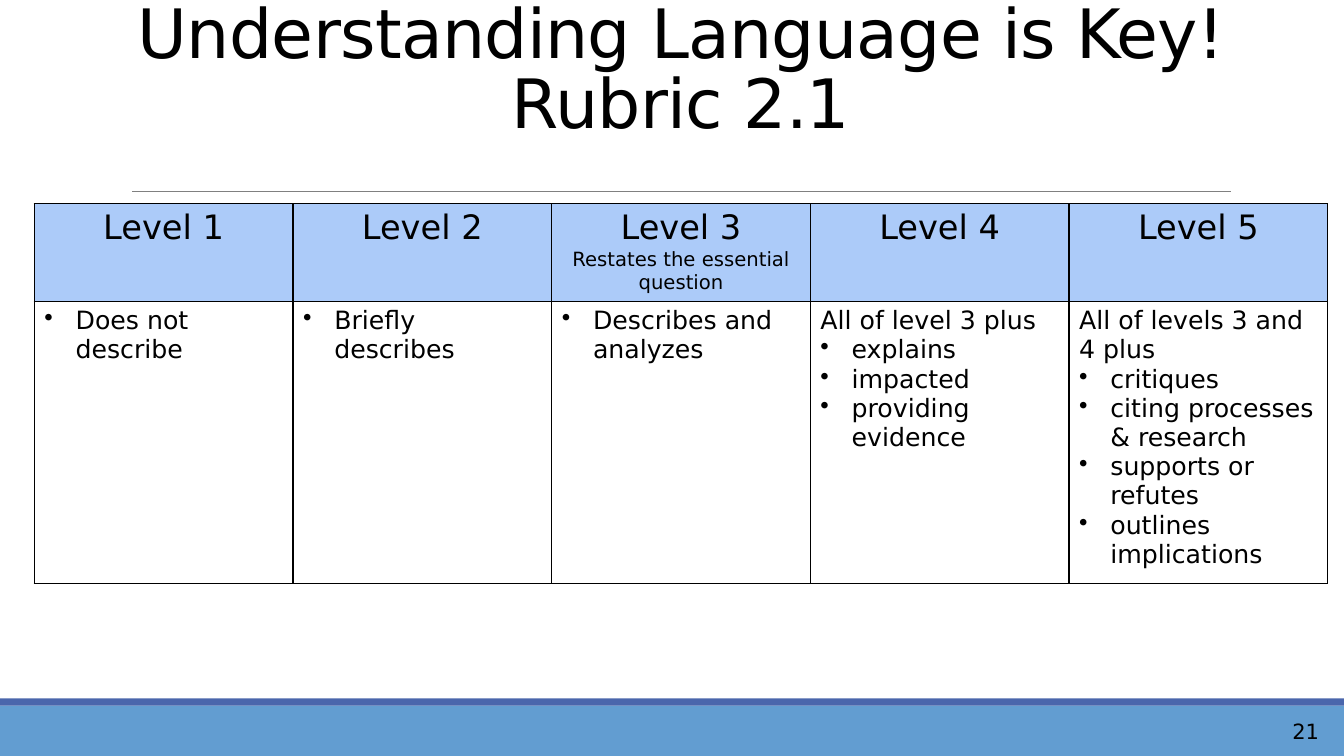
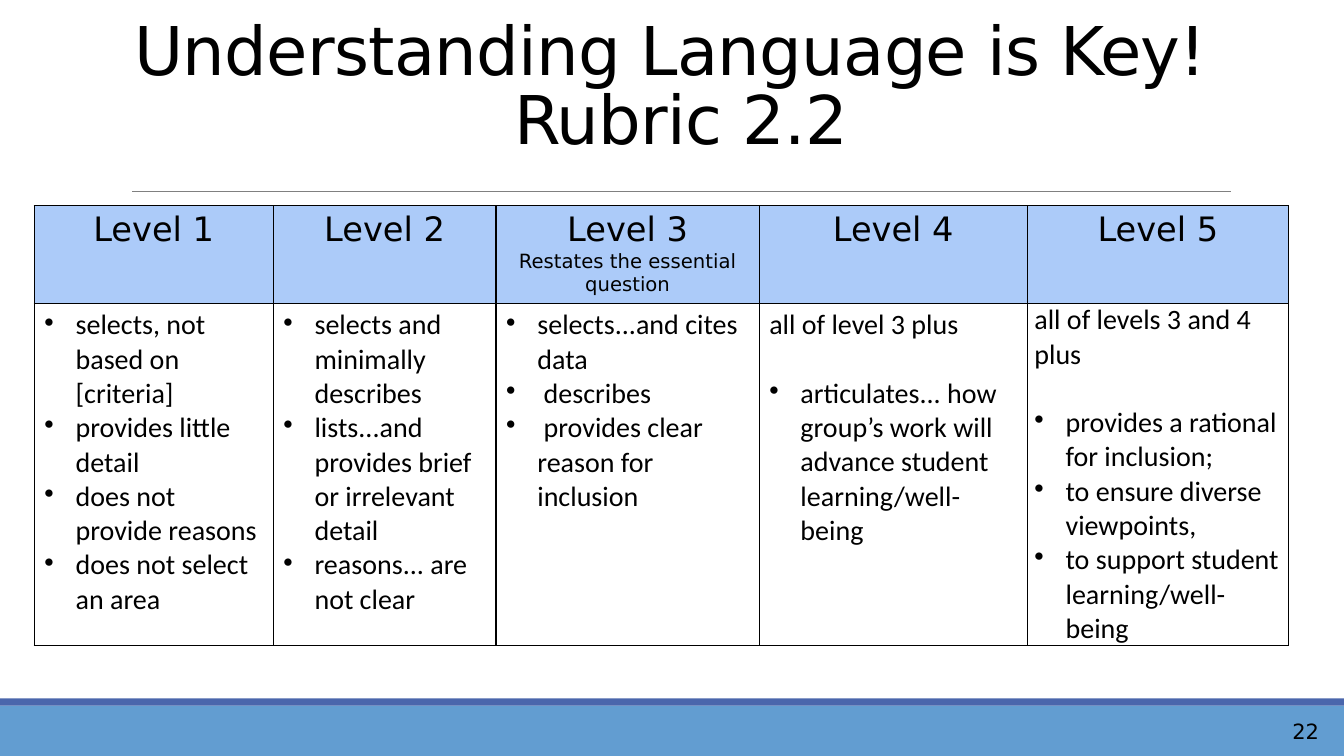
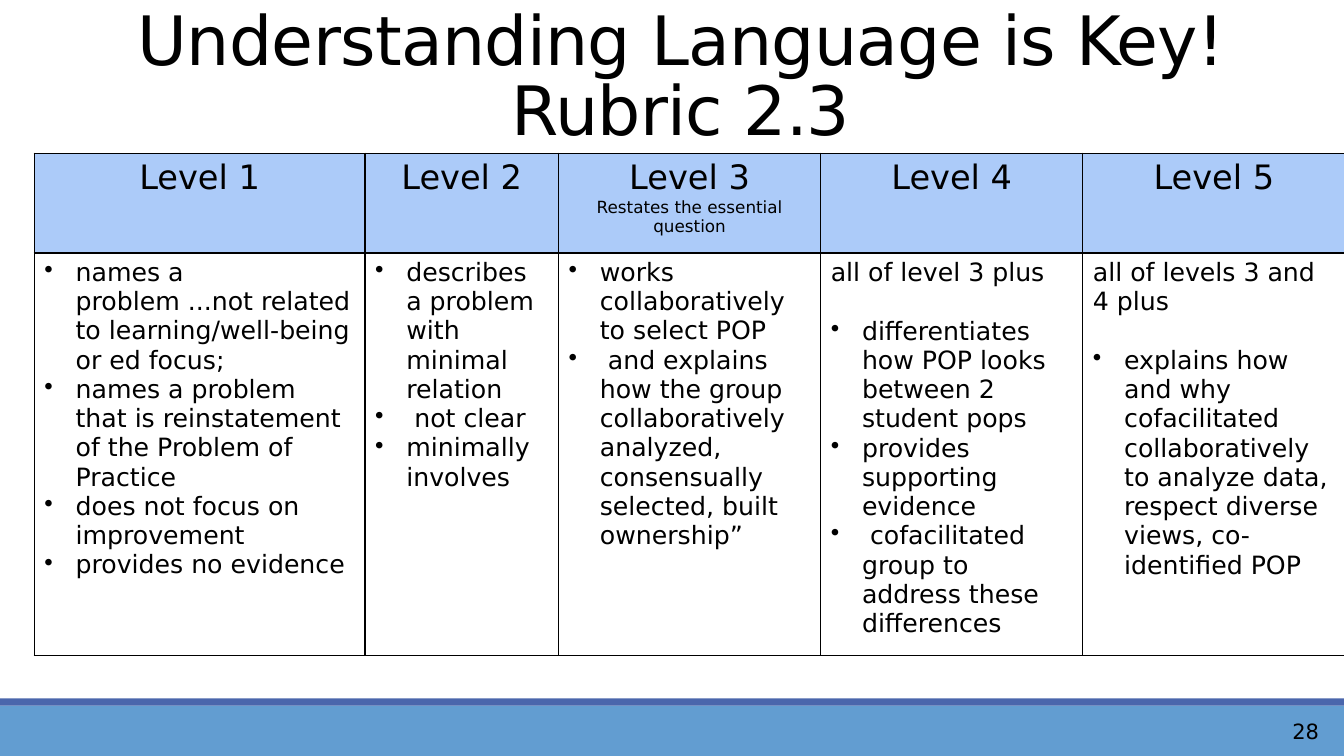
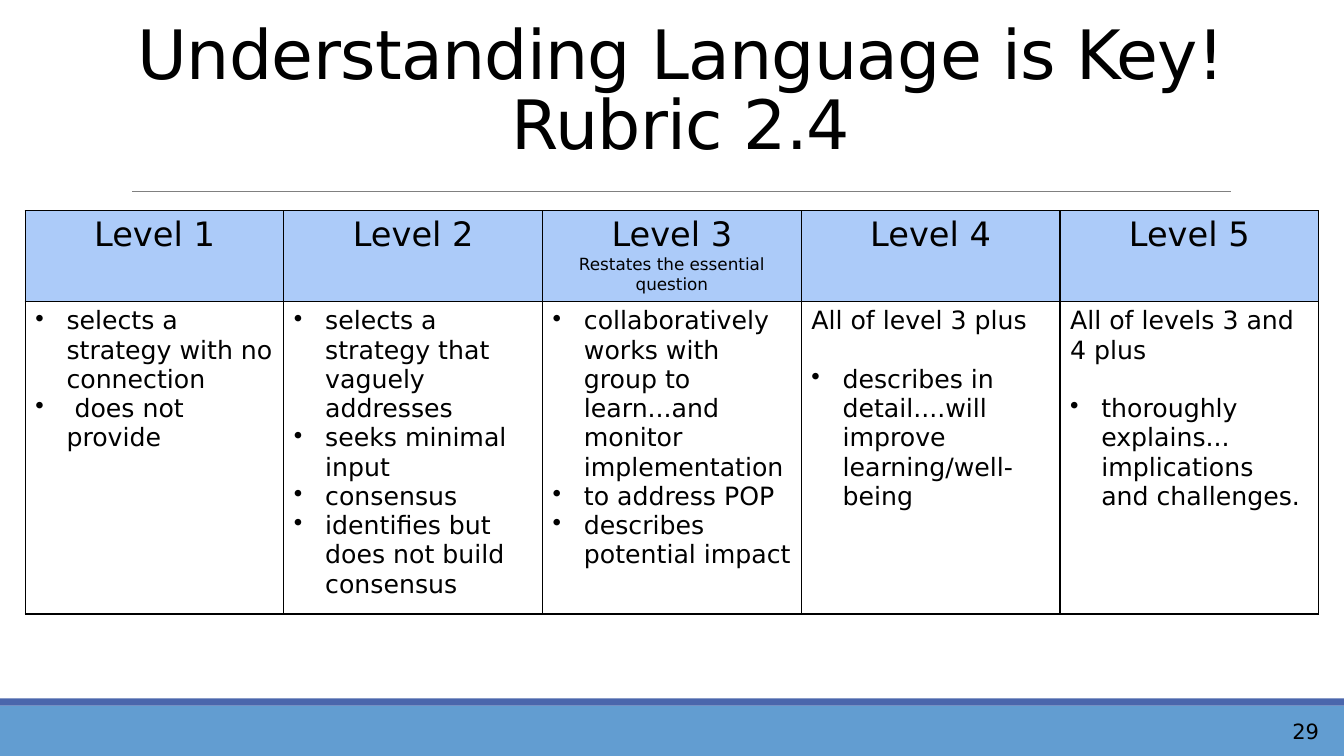
from lxml import etree
from pptx import Presentation
from pptx.dml.color import RGBColor
from pptx.enum.shapes import MSO_CONNECTOR, MSO_SHAPE
from pptx.enum.text import MSO_ANCHOR, MSO_AUTO_SIZE, PP_ALIGN
from pptx.oxml.ns import qn
from pptx.util import Inches, Pt

RECTANGLE = MSO_SHAPE.RECTANGLE
STRAIGHT = MSO_CONNECTOR.STRAIGHT
CENTER, RIGHT = PP_ALIGN.CENTER, PP_ALIGN.RIGHT
BOTTOM, MIDDLE = MSO_ANCHOR.BOTTOM, MSO_ANCHOR.MIDDLE
NO_AUTOFIT = MSO_AUTO_SIZE.NONE

BLACK, GRAY = "000000", "808080"
FOOTER_BLUE, STRIPE_BLUE, HEADER_BLUE = "629DD1", "4A66AC", "ACCBF9"
FONT = "DejaVu Sans"
SLIDE_WIDTH, SLIDE_HEIGHT = 13.33, 7.5
INDENT = 0.31
NBSP = chr(160)

# In each level, "intro" stands above the bulleted "points".
RUBRICS = [
    dict(
        number=21, heading=("Understanding Language is Key!", "Rubric 2.1"),
        title_box=(0.34, 0.31, 12.83, 1.15),
        table_at=(0.34, 2.02), columns=[12.83 / 5] * 5, rows=(0.94, 2.72),
        levels=[
            dict(points=["Does not describe"]),
            dict(points=["Briefly describes"]),
            dict(points=["Describes and analyzes"]),
            dict(intro="All of level 3 plus",
                 points=["explains", "impacted", "providing evidence"]),
            dict(intro="All of levels 3 and 4 plus",
                 points=["critiques", "citing processes & research",
                         "supports or refutes", "outlines implications"]),
        ],
    ),
    dict(
        number=22, heading=("Understanding Language is Key! ", "Rubric 2.2"),
        title_box=(0.34, 0.31, 12.83, 1.31), title_size=48,
        table_at=(0.34, 2.04), columns=[2.37, 2.21, 2.61, 2.66, 2.59],
        rows=(0.95, 3.4), body_font="Calibri", body_size=20, intro_gap=24.4,
        last_margins=(0.07, 0),
        levels=[
            dict(points=["selects, not based on [criteria]",
                         "provides little detail",
                         "does not provide reasons",
                         "does not select an area"]),
            dict(points=["selects and minimally describes",
                         "lists...and provides brief or irrelevant detail",
                         "reasons... are not clear"]),
            dict(points=["selects...and cites data",
                         " describes",
                         " provides clear reason for inclusion"]),
            dict(intro="all of level 3 plus",
                 points=["articulates... how group’s work will advance "
                         "student learning/well-being"]),
            dict(intro="all of levels 3 and 4 plus",
                 points=["provides a rational for inclusion;",
                         "to ensure diverse viewpoints,",
                         "to support student learning/well-being"]),
        ],
    ),
    dict(
        number=28, heading=("Understanding Language is Key!", "Rubric 2.3"),
        title_box=(0.34, 0.44, 12.83, 1.09),
        table_at=(0.34, 1.52), columns=[3.28, 1.92, 2.6, 2.6, 2.6],
        rows=(0.99, 3.88), note_size=12, intro_gap=21,
        levels=[
            dict(points=[f"names a problem{NBSP}...not related to "
                         "learning/well-being or ed focus;",
                         "names a problem that is reinstatement of the "
                         "Problem of Practice",
                         "does not focus on improvement",
                         "provides no evidence"]),
            dict(points=["describes a problem with minimal relation",
                         " not clear",
                         "minimally involves"]),
            dict(points=["works collaboratively to select POP",
                         " and explains how the group collaboratively "
                         "analyzed, consensually selected, built ownership”"]),
            dict(intro="all of level 3 plus",
                 points=["differentiates how POP looks between 2 student pops",
                         "provides supporting evidence",
                         " cofacilitated group to address these differences"]),
            dict(intro="all of levels 3 and 4 plus",
                 points=["explains how and why cofacilitated collaboratively "
                         "to analyze data, respect diverse views, "
                         "co-identified POP"]),
        ],
    ),
    dict(
        number=29, heading=("Understanding Language is Key!", "Rubric 2.4"),
        title_box=(0.34, 0.31, 12.83, 1.36),
        table_at=(0.25, 2.09), columns=[12.83 / 5] * 5, rows=(0.88, 3),
        note_size=12, intro_gap=21,
        levels=[
            dict(points=["selects a strategy with no connection",
                         " does not provide"]),
            dict(points=["selects a strategy that vaguely addresses",
                         "seeks minimal input",
                         "consensus",
                         "identifies but does not build consensus"]),
            dict(points=["collaboratively works with group to learn...and "
                         "monitor implementation",
                         "to address POP",
                         "describes potential impact"]),
            dict(intro="All of level 3 plus",
                 points=["describes in detail....will improve "
                         "learning/well-being"]),
            dict(intro="All of levels 3 and 4 plus",
                 points=["thoroughly explains... implications and "
                         "challenges."]),
        ],
    ),
]


def rgb(color):
    return RGBColor.from_string(color)


def style(paragraph, size, font=FONT, align=None):
    paragraph.font.name = font
    paragraph.font.size = Pt(size)
    paragraph.font.color.rgb = rgb(BLACK)
    paragraph.alignment = align


def add_bullet(paragraph):
    properties = paragraph._p.get_or_add_pPr()
    properties.set("marL", str(Inches(INDENT)))
    properties.set("indent", str(-Inches(INDENT)))
    etree.SubElement(properties, qn("a:buChar")).set("char", "•")


def add_band(slide, top, height, color):
    band = slide.shapes.add_shape(RECTANGLE, 0, Inches(top),
                                  Inches(SLIDE_WIDTH), Inches(height))
    band.shadow.inherit = False
    band.fill.solid()
    band.fill.fore_color.rgb = rgb(color)
    band.line.fill.background()


def add_frame(slide, number):
    """Add the footer bands, the rule under the title and the page number."""
    add_band(slide, 7, 0.5, FOOTER_BLUE)
    add_band(slide, 6.93, 0.07, STRIPE_BLUE)
    rule = slide.shapes.add_connector(STRAIGHT, Inches(1.31), Inches(1.9),
                                      Inches(12.21), Inches(1.9))
    rule.line.color.rgb = rgb(GRAY)
    rule.line.width = Pt(0.5)
    etree.SubElement(rule._element.spPr, qn("a:effectLst"))

    page = slide.shapes.add_textbox(Inches(12.46), Inches(7.03),
                                    Inches(0.72), Inches(0.44)).text_frame
    page.word_wrap = True
    page.vertical_anchor = MIDDLE
    page.text = str(number)
    style(page.paragraphs[0], 15, align=RIGHT)


def set_title(slide, lines, box, size):
    title = slide.shapes.title
    title.left, title.top, title.width, title.height = map(Inches, box)
    frame = title.text_frame
    frame.word_wrap = True
    frame.auto_size = NO_AUTOFIT
    frame.vertical_anchor = BOTTOM
    paragraph = frame.paragraphs[0]
    style(paragraph, size, align=CENTER)
    paragraph.line_spacing = 0.85
    for index, line in enumerate(lines):
        if index:
            paragraph.add_line_break()
        run = paragraph.add_run()
        run.text = line
        run._r.get_or_add_rPr().set("spc", "-50")


def add_borders(cell):
    properties = cell._tc.get_or_add_tcPr()
    for side in ("lnL", "lnR", "lnT", "lnB"):
        border = etree.SubElement(properties, qn(f"a:{side}"))
        border.set("w", str(Pt(1)))
        fill = etree.SubElement(border, qn("a:solidFill"))
        etree.SubElement(fill, qn("a:srgbClr")).set("val", BLACK)


def fill_header(cell, level, note_size):
    add_borders(cell)
    cell.fill.solid()
    cell.fill.fore_color.rgb = rgb(HEADER_BLUE)
    cell.text = f"Level {level}"
    style(cell.text_frame.paragraphs[0], 24, align=CENTER)
    if level == 3:
        note = cell.text_frame.add_paragraph()
        note.text = "Restates the essential question"
        style(note, note_size, align=CENTER)


def fill_body(cell, points, size, font, intro_gap, intro=None):
    add_borders(cell)
    cell.fill.background()
    frame = cell.text_frame
    lines = ([intro] if intro else []) + points
    for index, line in enumerate(lines):
        paragraph = frame.add_paragraph() if index else frame.paragraphs[0]
        paragraph.text = line
        if intro and index == 0:
            paragraph.space_after = Pt(intro_gap)
        else:
            add_bullet(paragraph)
        style(paragraph, size, font)


def add_rubric_table(slide, at, columns, rows, levels, note_size, body_size,
                     body_font, intro_gap, last_margins):
    left, top = at
    table = slide.shapes.add_table(
        len(rows), len(columns), Inches(left), Inches(top),
        Inches(sum(columns)), Inches(sum(rows))).table
    table.first_row = table.horz_banding = False
    for row, height in zip(table.rows, rows):
        row.height = Inches(height)
    for index, (width, level) in enumerate(zip(columns, levels)):
        table.columns[index].width = Inches(width)
        fill_header(table.cell(0, index), index + 1, note_size)
        fill_body(table.cell(1, index), size=body_size, font=body_font,
                  intro_gap=intro_gap, **level)
    if last_margins:
        side, end = map(Inches, last_margins)
        last = table.cell(1, len(columns) - 1)
        last.margin_left = last.margin_right = side
        last.margin_top = last.margin_bottom = end


def add_rubric_slide(deck, number, heading, title_box, table_at, columns, rows,
                     levels, title_size=48.6, note_size=14, body_size=18,
                     body_font=FONT, intro_gap=0, last_margins=None):
    slide = deck.slides.add_slide(deck.slide_layouts.get_by_name("Title Only"))
    add_frame(slide, number)
    set_title(slide, heading, title_box, title_size)
    add_rubric_table(slide, table_at, columns, rows, levels, note_size,
                     body_size, body_font, intro_gap, last_margins)


def main():
    deck = Presentation()
    deck.slide_width = Inches(SLIDE_WIDTH)
    deck.slide_height = Inches(SLIDE_HEIGHT)
    for rubric in RUBRICS:
        add_rubric_slide(deck, **rubric)
    deck.save("out.pptx")


if __name__ == "__main__":
    main()
